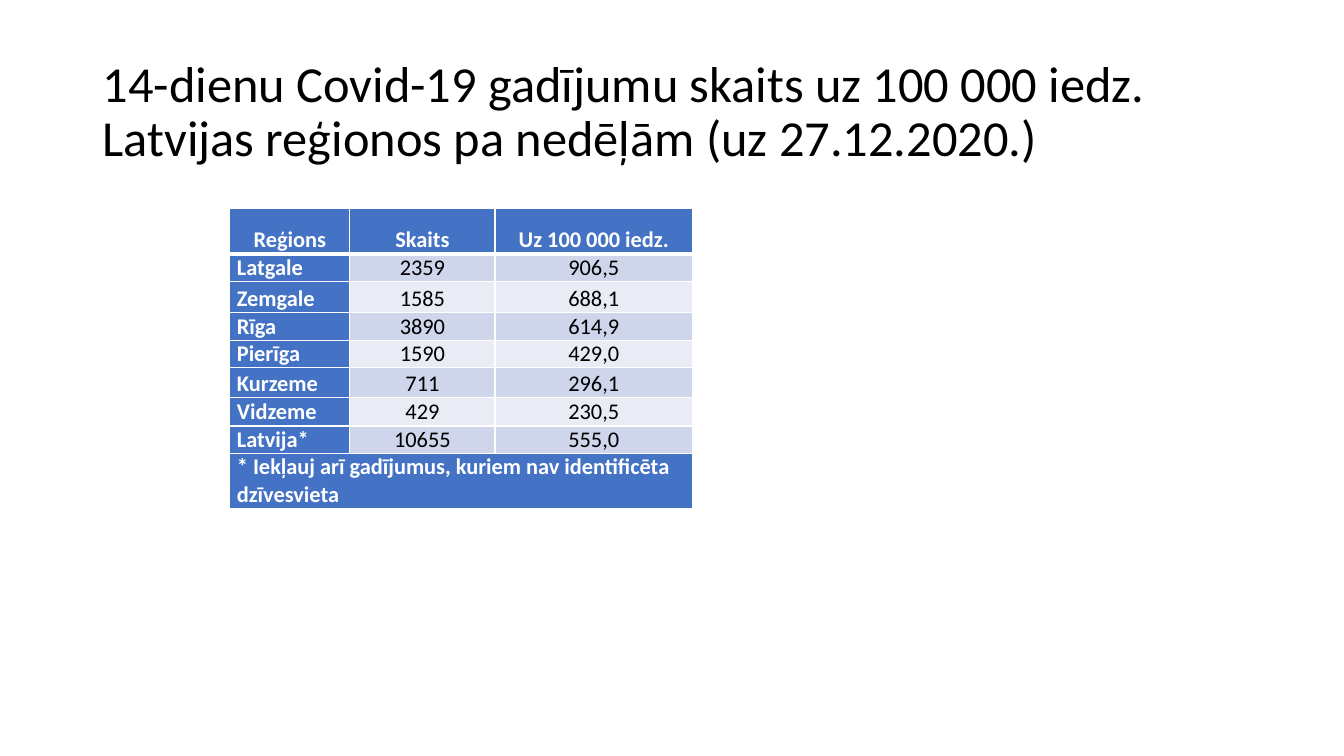
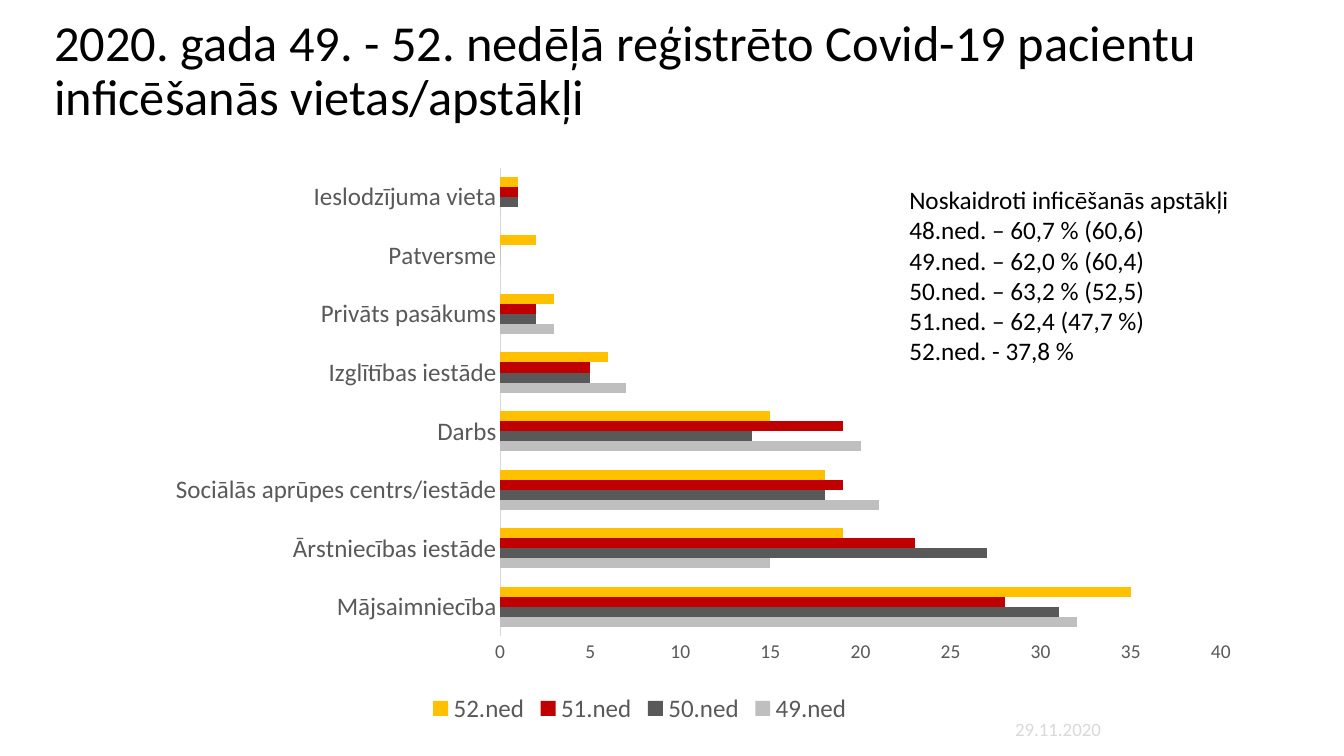
from lxml import etree
from pptx import Presentation
from pptx.chart.data import CategoryChartData
from pptx.dml.color import RGBColor
from pptx.enum.chart import XL_CHART_TYPE as ChartType, XL_LEGEND_POSITION as LegendPlace
from pptx.enum.chart import XL_TICK_MARK as TickMark
from pptx.enum.text import MSO_ANCHOR as Anchor, MSO_AUTO_SIZE as AutoSize, PP_ALIGN as Align
from pptx.oxml import parse_xml
from pptx.oxml.ns import nsdecls, qn
from pptx.util import Inches, Pt

FONT = "Calibri"
BLACK, WHITE = "000000", "FFFFFF"
BLUE, BANDS = "4472C4", ("CFD5EA", "E9EBF5")
AXIS_TEXT, PALE = "595959", "D9D9D9"

REGIONS = [
    ("Reģions", "Skaits", "Uz 100 000 iedz."),
    ("Latgale", "2359", "906,5"),
    ("Zemgale", "1585", "688,1"),
    ("Rīga", "3890", "614,9"),
    ("Pierīga", "1590", "429,0"),
    ("Kurzeme", "711", "296,1"),
    ("Vidzeme", "429", "230,5"),
    ("Latvija*", "10655", "555,0"),
    ("* Iekļauj arī gadījumus, kuriem nav identificēta dzīvesvieta", "", ""),
]
COLUMN_WIDTHS = (1.19, 1.44, 1.96)
ROW_HEIGHTS = (0.45, 0.26, 0.31, 0.26, 0.26, 0.3, 0.28, 0.26, 0.45)

PLACES = [
    "Mājsaimniecība", "Ārstniecības iestāde", "Sociālās aprūpes centrs/iestāde", "Darbs",
    "Izglītības iestāde", "Privāts pasākums", "Patversme", "Ieslodzījuma vieta",
]
WEEKS = [
    ("49.ned", "BFBFBF", (32, 15, 21, 20, 7, 3, 0, 0)),
    ("50.ned", "595959", (31, 27, 18, 14, 5, 2, 0, 1)),
    ("51.ned", "C00000", (28, 23, 19, 19, 5, 2, 0, 1)),
    ("52.ned", "FFC000", (35, 19, 18, 15, 6, 3, 2, 1)),
]
PLOT_BOX = {"x": 0.4, "y": 0.03, "w": 0.62, "h": 0.81}
KNOWN_SHARES = [
    "Noskaidroti inficēšanās apstākļi",
    "48.ned. – 60,7 % (60,6)",
    "49.ned. – 62,0 % (60,4)",
    "50.ned. – 63,2 % (52,5)",
    "51.ned. – 62,4 (47,7 %)",
    "52.ned. - 37,8 %",
]


def rgb(color):
    return RGBColor.from_string(color)


def set_font(font, size, color, bold=False):
    font.name, font.size, font.bold = FONT, Pt(size), bold
    font.color.rgb = rgb(color)


def add_span(para, text, size, color, bold=False):
    span = para.add_run()
    span.text = text
    set_font(span.font, size, color, bold)


def add_text(page, box, lines, size, color=BLACK, wrap=True):
    """Place a text box with one paragraph per line and return its frame."""
    frame = page.shapes.add_textbox(*map(Inches, box)).text_frame
    frame.word_wrap = wrap
    frame.auto_size = AutoSize.NONE
    for index, line in enumerate(lines):
        para = frame.add_paragraph() if index else frame.paragraphs[0]
        add_span(para, line, size, color)
    return frame


def add_title(page, box, text):
    frame = add_text(page, box, [text], 36)
    frame.vertical_anchor = Anchor.MIDDLE
    frame.paragraphs[0].line_spacing = 0.9


def set_borders(cell, top, bottom):
    """Draw white cell borders; top and bottom are widths in points."""
    widths = {"lnL": 1, "lnR": 1, "lnT": top, "lnB": bottom}
    properties = cell._tc.get_or_add_tcPr()
    for index, (side, width) in enumerate(widths.items()):
        properties.insert(index, parse_xml(
            f'<a:{side} {nsdecls("a")} w="{Pt(width)}"><a:solidFill>'
            f'<a:srgbClr val="{WHITE}"/></a:solidFill></a:{side}>'))


def fill_cell(cell, text, row, column):
    is_header, is_note = row == 0, row == len(REGIONS) - 1
    is_label = is_header or is_note or column == 0
    cell.fill.solid()
    cell.fill.fore_color.rgb = rgb(BLUE if is_label else BANDS[(row - 1) % 2])
    set_borders(cell, 3 if row == 1 else 1, 3 if is_header else 1)
    cell.margin_left = cell.margin_right = Inches(0.07)
    cell.margin_top = cell.margin_bottom = 0
    cell.vertical_anchor = Anchor.BOTTOM
    para = cell.text_frame.paragraphs[0]
    para.alignment = Align.CENTER if is_header or column else Align.LEFT
    if text:
        add_span(para, text, 16, WHITE if is_label else BLACK, is_label)


def add_region_table(page, box):
    table = page.shapes.add_table(len(REGIONS), len(COLUMN_WIDTHS), *map(Inches, box)).table
    table.first_row = table.horz_banding = False
    for column, width in zip(table.columns, COLUMN_WIDTHS):
        column.width = Inches(width)
    for row, height in zip(table.rows, ROW_HEIGHTS):
        row.height = Inches(height)
    for row, texts in enumerate(REGIONS):
        for column, text in enumerate(texts):
            fill_cell(table.cell(row, column), text, row, column)
    last = len(REGIONS) - 1
    table.cell(last, 0).merge(table.cell(last, len(COLUMN_WIDTHS) - 1))


def set_plot_box(chart):
    """Fix the inner plot area as shares of the chart frame."""
    plot_area = chart._chartSpace.chart.plotArea
    for old in plot_area.findall(qn("c:layout")):
        plot_area.remove(old)
    layout = etree.Element(qn("c:layout"))
    manual = etree.SubElement(layout, qn("c:manualLayout"))
    settings = {"layoutTarget": "inner", "xMode": "edge", "yMode": "edge", **PLOT_BOX}
    for name, value in settings.items():
        etree.SubElement(manual, qn(f"c:{name}"), val=str(value))
    plot_area.insert(0, layout)


def style_axis(axis, size):
    axis.has_major_gridlines = False
    axis.major_tick_mark = axis.minor_tick_mark = TickMark.NONE
    set_font(axis.tick_labels.font, size, AXIS_TEXT)


def add_places_chart(page, box):
    data = CategoryChartData(number_format="0")
    data.categories = PLACES
    for name, _, values in WEEKS:
        data.add_series(name, values)
    chart = page.shapes.add_chart(ChartType.BAR_CLUSTERED, *map(Inches, box), data).chart
    set_font(chart.font, 10, BLACK)
    chart.has_title = False
    set_plot_box(chart)

    plot = chart.plots[0]
    plot.gap_width, plot.overlap, plot.vary_by_categories = 182, 0, False
    for series, (_, color, _) in zip(plot.series, WEEKS):
        series.format.fill.solid()
        series.format.fill.fore_color.rgb = rgb(color)

    places, values = chart.category_axis, chart.value_axis
    style_axis(places, 18)
    places.format.line.width = Pt(0.75)
    places.format.line.color.rgb = rgb(PALE)
    style_axis(values, 14)
    values.format.line.fill.background()
    values.minimum_scale, values.maximum_scale, values.major_unit = 0, 40, 5
    values.tick_labels.number_format = "0"
    values.tick_labels.number_format_is_linked = False

    chart.has_legend = True
    chart.legend.position = LegendPlace.BOTTOM
    chart.legend.include_in_layout = False
    set_font(chart.legend.font, 18, AXIS_TEXT)


def build_regions_page(page):
    add_title(page, (0.92, 0.4, 11.5, 1.45),
              "14-dienu Covid-19 gadījumu skaits uz 100 000 iedz. "
              "Latvijas reģionos pa nedēļām (uz 27.12.2020.)")
    add_region_table(page, (2.28, 2.07, sum(COLUMN_WIDTHS), sum(ROW_HEIGHTS)))


def build_places_page(page):
    add_title(page, (0.44, 0.09, 12.74, 1.25),
              "2020. gada 49. - 52. nedēļā reģistrēto Covid-19 pacientu "
              "inficēšanās vietas/apstākļi")
    add_places_chart(page, (0.58, 1.49, 11.63, 5.74))
    add_text(page, (9.97, 7.07, 1.3, 0.33), ["29.11.2020"], 13.5, PALE)
    add_text(page, (8.92, 1.78, 3.4, 1.92), KNOWN_SHARES, 18, wrap=False)


def main():
    deck = Presentation()
    deck.slide_width, deck.slide_height = Inches(13.33), Inches(7.5)
    for build in (build_regions_page, build_places_page):
        build(deck.slides.add_slide(deck.slide_layouts[6]))
    deck.save("out.pptx")


if __name__ == "__main__":
    main()
